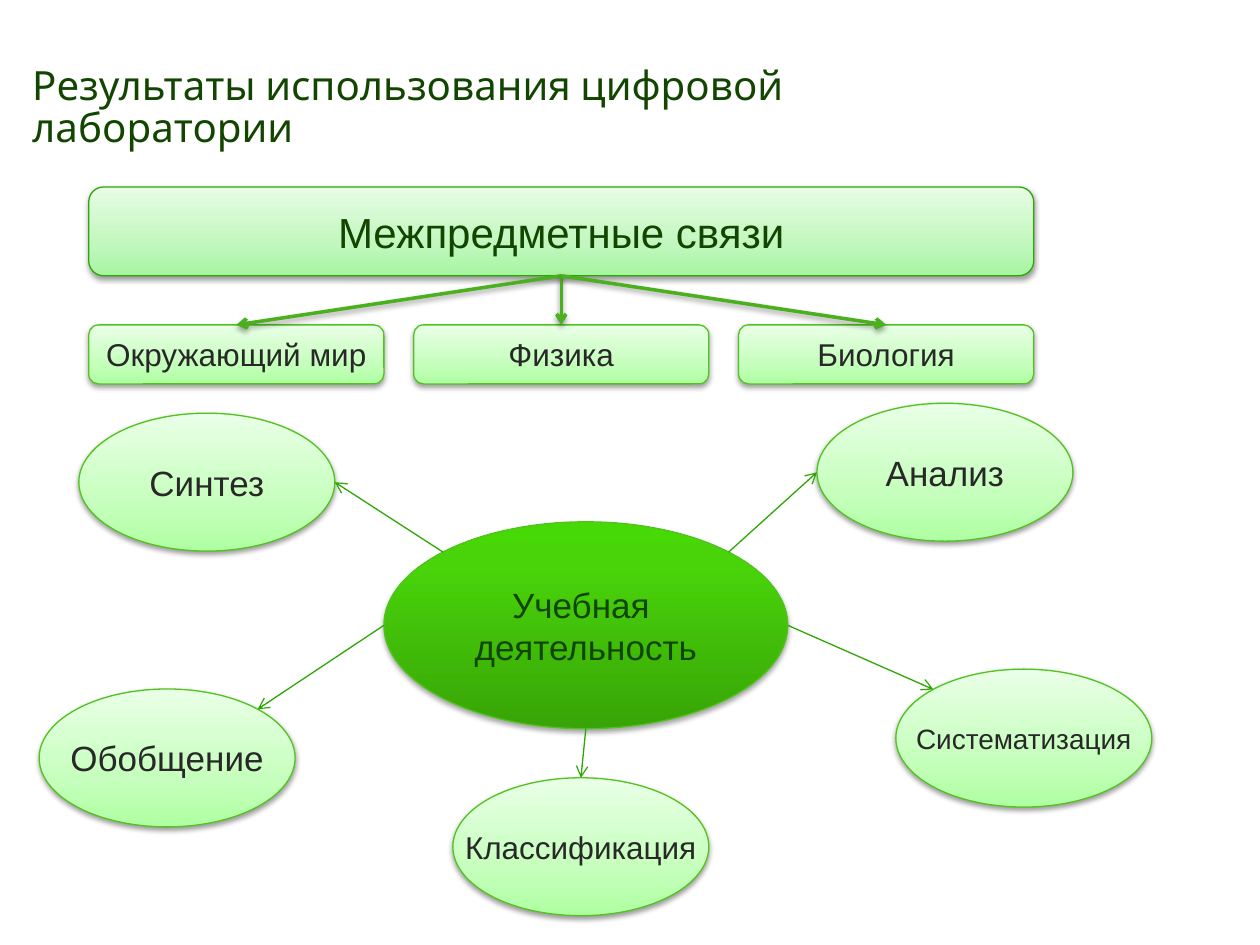
import copy
import math
from dataclasses import dataclass

import pptx
import pptx.dml.color
import pptx.enum.shapes
import pptx.enum.text
import pptx.oxml
import pptx.oxml.ns
import pptx.util

Cm = pptx.util.Cm
Pt = pptx.util.Pt
Kind = pptx.enum.shapes.MSO_SHAPE
qn = pptx.oxml.ns.qn

HUES = {"dark": "114500", "text": "282828", "edge": "51C31D", "line": "2EA706", "bold": "4BB01E"}
FADES = {
    "head": [(0, "A6F5A1"), (0.35, "C1F7BE"), (1, "E7FDE5")],
    "pale": [(0, "AFFFA2"), (0.35, "C6FFBD"), (1, "E9FFE6")],
    "core": [(0, "38A407"), (0.8, "49D40A"), (1, "47D906")],
}


@dataclass
class Node:
    text: str
    x: float
    y: float
    w: float = 5.16
    h: float = 2.78
    size: float = 20
    kind: int = Kind.OVAL
    fade: str = "pale"
    edge: str = "edge"
    ink: str = "text"
    alpha: int = 38
    drop: float = 1.6

    def rim(self, turn: float) -> tuple[float, float]:
        rad = math.radians(turn)
        return (self.x + self.w / 2 * (1 + math.cos(rad)),
                self.y + self.h / 2 * (1 + math.sin(rad)))


@dataclass
class Spoke:
    node: Node
    start: float
    end: float


def tint(name: str):
    return pptx.dml.color.RGBColor.from_string(HUES[name])


def put_text(shape, text: str, *, size: float, ink: str, font: str = "Arial",
             align=pptx.enum.text.PP_ALIGN.CENTER, wrap: bool = False, space: float = 1) -> None:
    frame = shape.text_frame
    frame.word_wrap = wrap
    frame.vertical_anchor = pptx.enum.text.MSO_ANCHOR.MIDDLE
    frame.text = text
    for para in frame.paragraphs:
        para.alignment = align
        para.line_spacing = space
        para.font.size = Pt(size)
        para.font.name = font
        para.font.color.rgb = tint(ink)


def add_shade(effects, alpha: int, drop: float) -> None:
    effects.append(pptx.oxml.parse_xml(
        '<a:outerShdw xmlns:a="http://schemas.openxmlformats.org/drawingml/2006/main" '
        f'blurRad="{Pt(3.1)}" dist="{Pt(drop)}" dir="5400000" rotWithShape="0">'
        f'<a:srgbClr val="000000"><a:alpha val="{alpha * 1000}"/></a:srgbClr></a:outerShdw>'))


def set_fade(shape, stops: list[tuple[float, str]]) -> None:
    shape.fill.gradient()
    shape.fill.gradient_angle = 90
    group = shape._element.spPr.find(".//" + qn("a:gsLst"))
    group.append(copy.deepcopy(group[-1]))
    for stop, (place, hue) in zip(shape.fill.gradient_stops, stops):
        stop.position = place
        stop.color.rgb = pptx.dml.color.RGBColor.from_string(hue)


def draw_node(slide, node: Node):
    shape = slide.shapes.add_shape(node.kind, Cm(node.x), Cm(node.y), Cm(node.w), Cm(node.h))
    set_fade(shape, FADES[node.fade])
    shape.line.color.rgb = tint(node.edge)
    shape.line.width = Pt(0.75)
    shape.shadow.inherit = False
    add_shade(shape._element.spPr.find(qn("a:effectLst")), node.alpha, node.drop)
    put_text(shape, node.text, size=node.size, ink=node.ink)
    return shape


def draw_line(slide, start: tuple[float, float], end: tuple[float, float],
              hue: str, width: float, shade: bool = False):
    line = slide.shapes.add_connector(
        pptx.enum.shapes.MSO_CONNECTOR.STRAIGHT, *map(Cm, start + end))
    line.line.color.rgb = tint(hue)
    line.line.width = Pt(width)
    props = line._element.spPr
    tip = props.find(qn("a:ln")).makeelement(qn("a:tailEnd"), {"type": "arrow"})
    props.find(qn("a:ln")).append(tip)
    effects = props.makeelement(qn("a:effectLst"), {})
    props.append(effects)
    if shade:
        add_shade(effects, 38, 1.6)
    return line


def main() -> None:
    deck = pptx.Presentation()
    deck.slide_width, deck.slide_height = Cm(25.4), Cm(19.05)
    slide = deck.slides.add_slide(deck.slide_layouts[6])

    title = slide.shapes.add_textbox(Cm(0.4), Cm(1.2), Cm(20.73), Cm(1.98))
    put_text(title, "Результаты использования цифровой лаборатории", size=23, ink="dark",
             font="Karla", align=pptx.enum.text.PP_ALIGN.LEFT, wrap=True, space=0.88)

    head = Node("Межпредметные связи", 1.79, 3.77, 19.05, 1.79, size=24,
                kind=Kind.ROUNDED_RECTANGLE, fade="head", edge="line", ink="dark")
    top = draw_node(slide, head)
    fields = [
        Node(text, head.x + 6.55 * i, 6.55, 5.95, 1.19, size=18, kind=Kind.ROUNDED_RECTANGLE)
        for i, text in enumerate(["Окружающий мир", "Физика", "Биология"])
    ]
    boxes = [draw_node(slide, field) for field in fields]
    for field, box in zip(fields, boxes):
        line = draw_line(slide, head.rim(90), field.rim(270), "bold", 2, shade=True)
        line.begin_connect(top, 2)
        line.end_connect(box, 0)

    hub = Node("Учебная \nдеятельность", 7.74, 10.52, 8.14, 4.17,
               fade="core", ink="dark", alpha=35, drop=1.8)
    draw_node(slide, hub)
    spokes = [
        Spoke(Node("Синтез", 1.59, 8.33), 225, 0),
        Spoke(Node("Обобщение", 0.79, 13.89), 180, 315),
        Spoke(Node("Классификация", 9.13, 15.68, size=18), 90, 270),
        Spoke(Node("Систематизация", 18.06, 13.49, size=16), 0, 225),
        Spoke(Node("Анализ", 16.47, 8.13), 315, 180),
    ]
    for spoke in spokes:
        draw_node(slide, spoke.node)
    for spoke in spokes:
        draw_line(slide, hub.rim(spoke.start), spoke.node.rim(spoke.end), "line", 0.75)

    deck.save("out.pptx")


if __name__ == "__main__":
    main()
